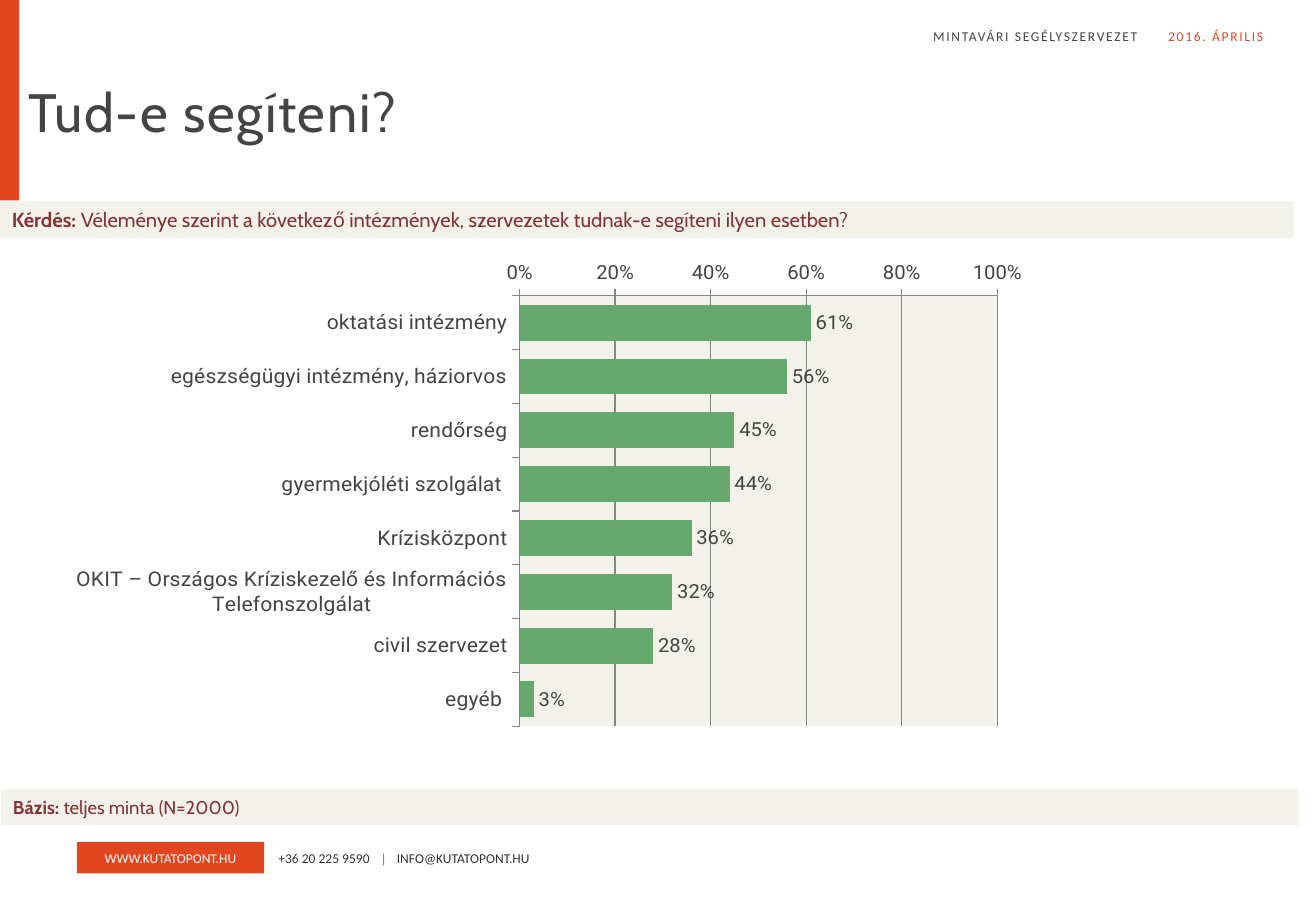
import pptx
import pptx.chart.data
import pptx.dml.color
import pptx.enum.chart
import pptx.enum.shapes
import pptx.enum.text
import pptx.oxml
import pptx.oxml.ns
import pptx.util

RGBColor = pptx.dml.color.RGBColor
ORANGE = RGBColor(0xE1, 0x46, 0x1F)
DARK = RGBColor(0x44, 0x44, 0x44)
INK = RGBColor(0x33, 0x33, 0x33)
WINE = RGBColor(0x86, 0x33, 0x33)
CREAM = RGBColor(0xF2, 0xF2, 0xEB)
GREEN = RGBColor(0x66, 0xA8, 0x6E)
GREY = RGBColor(0x86, 0x86, 0x86)
WHITE = RGBColor(0xFF, 0xFF, 0xFF)

PX = 7620  # 120 px to the inch
ALIGN = pptx.enum.text.PP_ALIGN
ANCHOR = pptx.enum.text.MSO_ANCHOR
NS = pptx.oxml.ns.nsdecls


def write(sp, runs, font, size, align=ALIGN.LEFT, anchor=ANCHOR.MIDDLE, inset=0, spacing=0):
    """Fill a shape with one paragraph; runs are (text, colour, bold)."""
    tf = sp.text_frame
    frame = {"word_wrap": True, "auto_size": pptx.enum.text.MSO_AUTO_SIZE.NONE,
             "vertical_anchor": anchor, "margin_left": inset * PX, "margin_right": inset * PX,
             "margin_top": 0, "margin_bottom": 0}
    for name, value in frame.items():
        setattr(tf, name, value)
    p = tf.paragraphs[0]
    p.alignment = align
    for text, color, bold in runs:
        r = p.add_run()
        r.text = text
        for name, value in {"name": font, "size": pptx.util.Pt(size), "bold": bold}.items():
            setattr(r.font, name, value)
        r.font.color.rgb = color
        if spacing:
            r.font._element.set("spc", str(spacing * 100))
    return p


def add_block(x, y, w, h, color):
    sp = s.shapes.add_shape(pptx.enum.shapes.MSO_SHAPE.RECTANGLE, x * PX, y * PX, w * PX, h * PX)
    sp.shadow.inherit = False
    sp.fill.solid()
    sp.fill.fore_color.rgb = color
    sp.line.fill.background()
    return sp


prs = pptx.Presentation()
prs.slide_width, prs.slide_height = 1300 * PX, 900 * PX
s = prs.slides.add_slide(prs.slide_layouts[5])

# Header
for text, right, color in [("MINTAVÁRI SEGÉLYSZERVEZET", 1124, DARK), ("2016. ÁPRILIS", 1248, ORANGE)]:
    sp = s.shapes.add_textbox((right - 300) * PX, 28 * PX, 300 * PX, 24 * PX)
    write(sp, [(text, color, False)], "Calibri", 8, ALIGN.RIGHT, ANCHOR.TOP, spacing=1)
add_block(0, 0, 19, 198, ORANGE)

title = s.shapes.title
title.left, title.top, title.width, title.height = 28 * PX, 78 * PX, 1222 * PX, 121 * PX
write(title, [("Tud-e segíteni?", DARK, False)], "Cabin", 32, anchor=ANCHOR.TOP, spacing=1)

# Question and base bands
bands = [
    ((0, 199, 1278, 36), 12, "Kérdés: ",
     "Véleménye szerint a következő intézmények, szervezetek tudnak-e segíteni ilyen esetben?"),
    ((1, 780, 1282, 35), 11, "Bázis: ", "teljes minta (N=2000)"),
]
for box, size, label, text in bands:
    write(add_block(*box, CREAM), [(label, WINE, True), (text, WINE, False)], "Cabin", size, inset=12)

# Chart
answers = [
    ("oktatási intézmény", 61),
    ("egészségügyi intézmény, háziorvos", 56),
    ("rendőrség", 45),
    ("gyermekjóléti szolgálat ", 44),
    ("Krízisközpont", 36),
    ("OKIT – Országos Kríziskezelő és Információs Telefonszolgálat", 32),
    ("civil szervezet", 28),
    ("egyéb ", 3),
]
PERCENT = '0"%"'
data = pptx.chart.data.CategoryChartData()
data.categories = [name for name, _ in answers]
data.add_series("Series 1", [value for _, value in answers])
XL = pptx.enum.chart
chart = s.shapes.add_chart(XL.XL_CHART_TYPE.BAR_CLUSTERED, 0, 258 * PX, 1151 * PX, 499 * PX, data).chart
chart.has_legend = False
chart.has_title = False
chart.font.name = "Roboto"
chart.font.color.rgb = DARK

cat, val = chart.category_axis, chart.value_axis
cat.reverse_order = True
cat.crosses = XL.XL_AXIS_CROSSES.MAXIMUM
val_format = {"minimum_scale": 0, "maximum_scale": 100, "major_unit": 20, "has_major_gridlines": True}
for name, value in val_format.items():
    setattr(val, name, value)
val.tick_labels.number_format = PERCENT
val.tick_labels.number_format_is_linked = False
for axis, size in [(cat, 12.5), (val, 12)]:
    axis.major_tick_mark = XL.XL_TICK_MARK.OUTSIDE
    axis.tick_labels.font.size = pptx.util.Pt(size)
for line in [cat.format.line, val.format.line, val.major_gridlines.format.line]:
    line.color.rgb = GREY
    line.width = pptx.util.Pt(0.75)

plot = chart.plots[0]
plot.gap_width = 50
plot.vary_by_categories = False
fill = plot.series[0].format.fill
fill.solid()
fill.fore_color.rgb = GREEN
plot.has_data_labels = True
labels = plot.data_labels
label_format = {"show_value": True, "number_format": PERCENT, "number_format_is_linked": False,
                "position": XL.XL_LABEL_POSITION.OUTSIDE_END}
for name, value in label_format.items():
    setattr(labels, name, value)
labels.font.size = pptx.util.Pt(12)

area = chart._chartSpace.chart.plotArea
for old in area.findall(pptx.oxml.ns.qn("c:layout")):
    area.remove(old)
area.insert(0, pptx.oxml.parse_xml(
    f'<c:layout {NS("c")}><c:manualLayout><c:layoutTarget val="inner"/>'
    '<c:xMode val="edge"/><c:yMode val="edge"/><c:x val="0.446"/><c:y val="0.03"/>'
    '<c:w val="0.41"/><c:h val="0.888"/></c:manualLayout></c:layout>'))
area.append(pptx.oxml.parse_xml(
    f'<c:spPr {NS("c", "a")}><a:solidFill><a:srgbClr val="{CREAM}"/></a:solidFill></c:spPr>'))

# Footer
write(add_block(76, 832, 185, 31, ORANGE), [("WWW.KUTATOPONT.HU", WHITE, False)],
      "Calibri", 8, ALIGN.CENTER)
sp = s.shapes.add_textbox(275 * PX, 832 * PX, 360 * PX, 31 * PX)
p = write(sp, [("+36 20 225 9590", INK, False), ("\t|", ORANGE, False),
               ("\tINFO@KUTATOPONT.HU", INK, False)], "Calibri", 8)
tabs = "".join(f'<a:tab pos="{x * PX}" algn="l"/>' for x in (101, 117))
p._p.get_or_add_pPr().append(pptx.oxml.parse_xml(f'<a:tabLst {NS("a")}>{tabs}</a:tabLst>'))

prs.save("out.pptx")
